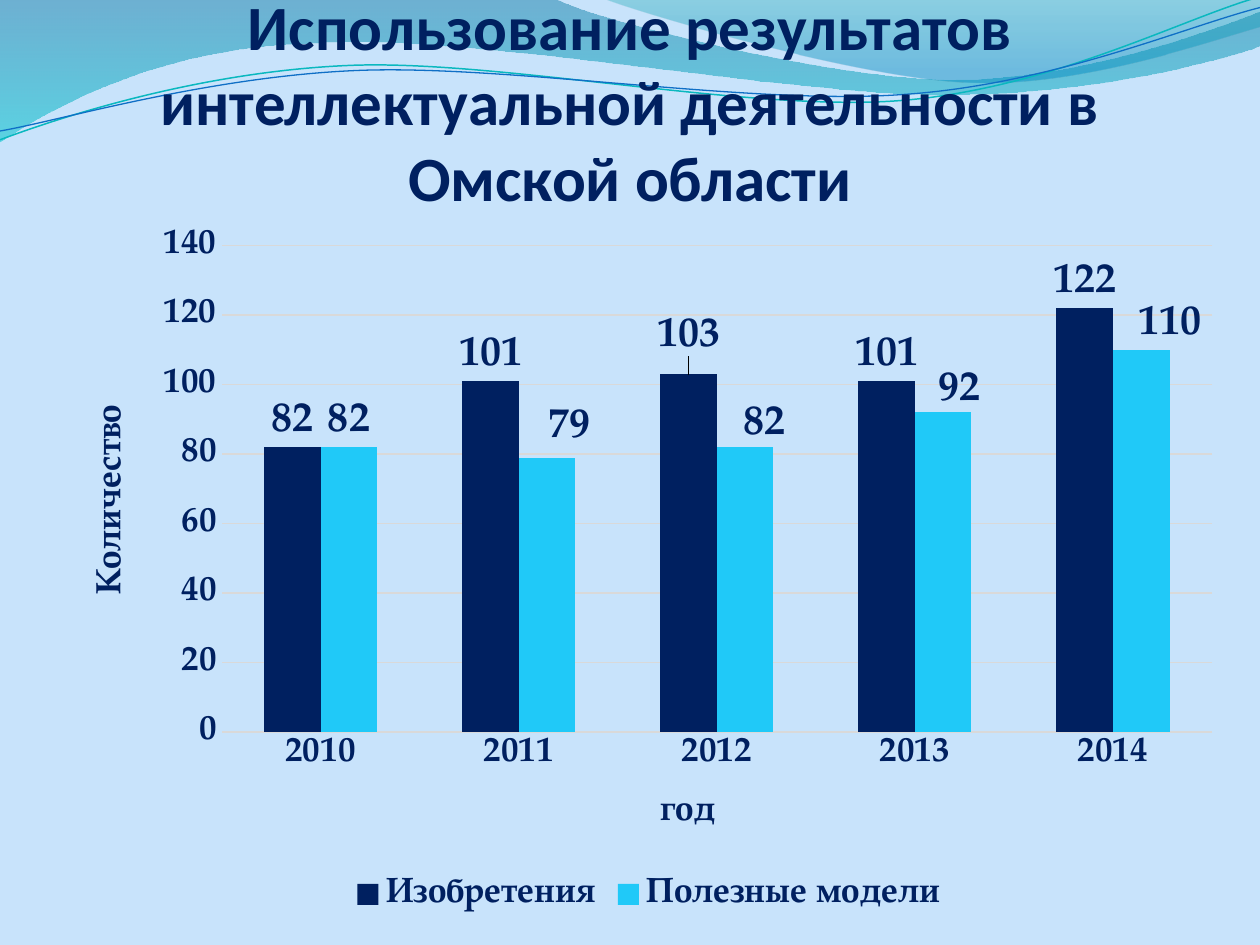
from lxml import etree
from pptx import Presentation
from pptx.chart.data import CategoryChartData
from pptx.dml.color import RGBColor
from pptx.enum.chart import XL_CHART_TYPE as ChartType, XL_LABEL_POSITION as LabelPos
from pptx.enum.chart import XL_LEGEND_POSITION as LegendPos, XL_TICK_MARK as Tick
from pptx.enum.text import MSO_ANCHOR as Anchor, PP_ALIGN as Align
from pptx.oxml import parse_xml
from pptx.oxml.ns import nsdecls, qn
from pptx.util import Inches, Pt

COLORS = {
    "bg": "C8E3FB", "navy": "002060", "cyan": "20C9F8", "grid": "D9D9D9",
    "wave_blue": "0074A1", "wave_cyan": "00C6CF",
    "crest_teal": "00A1A9", "crest_blue": "008BBF",
    "line_teal": "0AB8BF", "line_blue": "0F6FC6",
}
SERIF = "TeX Gyre Pagella"
YEARS = ["2010", "2011", "2012", "2013", "2014"]
SERIES = [
    ("Изобретения", [82, 101, 103, 101, 122], "navy", {2: (0, -0.1)}),
    ("Полезные модели", [82, 79, 82, 92, 110], "cyan",
     {1: (0.18, -0.04), 2: (0.15, 0.02), 3: (0.13, 0.03), 4: (0.23, 0)}),
]
WAVES = [
    ([(0, 0), (4.4, -0.01),
      (4.76, 0.17, 6.64, 0.63, 7.58, 0.63), (8.53, 0.63, 9.58, 0.26, 10, 0.09),
      (10.01, 0.36),
      (9.83, 0.44, 8.7, 0.76, 7.46, 0.75), (6.22, 0.75, 3.82, 0.28, 2.57, 0.34),
      (1.29, 0.36, 0.46, 0.83, -0.01, 1.13), (0, 0)],
     [("wave_blue", 0, 45), ("wave_cyan", 1, 55)]),
    ([(4.79, -0.01),
      (5.09, 0.11, 6.82, 0.62, 7.69, 0.65), (8.56, 0.69, 9.61, 0.32, 10, 0.21),
      (10, 0), (4.79, -0.01)],
     [("crest_teal", 0, 30), ("crest_blue", 0.8, 45)]),
]
STRANDS = [
    ([(0, 1.11), (0.48, 0.93, 1.58, 0.57, 2.77, 0.52),
      (3.95, 0.47, 5.93, 0.89, 7.13, 0.8), (8.33, 0.71, 9.38, 0.15, 9.98, -0.02)],
     "line_teal", 0.85),
    ([(0, 1.04), (0.47, 0.96, 1.64, 0.61, 2.83, 0.56),
      (4.03, 0.51, 5.97, 0.84, 7.17, 0.75), (8.36, 0.67, 9.41, 0.21, 10, 0.06)],
     "line_blue", 0.75),
]


def rgb(name):
    """Return the named colour."""
    return RGBColor.from_string(COLORS[name])


def style_font(font, size, name=SERIF):
    """Make a font bold navy in the given size."""
    font.name, font.size, font.bold = name, Pt(size), True
    font.color.rgb = rgb("navy")


def add_outline(s, left, top, steps, close):
    """Draw an outline of lines and cubic curves, offset from left and top."""
    points = [(Inches(x), Inches(y)) for step in steps
              for x, y in zip(step[::2], step[1::2])]
    builder = s.shapes.build_freeform(*points[0], scale=1.0)
    builder.add_line_segments(points[1:], close=close)
    sp = builder.convert_to_shape(left, top)
    sp.shadow.inherit = False
    segments = iter(list(sp._element.iter(qn("a:lnTo"))))
    for step in steps[1:]:
        segment = next(segments)
        if len(step) == 6:
            curve = etree.Element(qn("a:cubicBezTo"))
            segment.addprevious(curve)
            for part in (segment, next(segments), next(segments)):
                curve.append(part[0])
                part.getparent().remove(part)
    return sp


def add_waves(s, left, top):
    """Draw the translucent waves and thin strands of the header."""
    for steps, stops in WAVES:
        sp = add_outline(s, left, top, steps, True)
        sp.line.fill.background()
        sp.fill.gradient()
        sp.fill.gradient_angle = 270
        for stop, (color, position, _) in zip(sp.fill.gradient_stops, stops):
            stop.color.rgb, stop.position = rgb(color), position
        for clr, (_, _, alpha) in zip(sp._element.spPr.iter(qn("a:srgbClr")), stops):
            etree.SubElement(clr, qn("a:alpha")).set("val", str(alpha * 1000))
    for steps, color, width in STRANDS:
        sp = add_outline(s, left, top, steps, False)
        sp.fill.background()
        sp.line.color.rgb, sp.line.width = rgb(color), Pt(width)


def add_title(s, left, top, width, height):
    """Place the bottom-anchored title."""
    tf = s.shapes.add_textbox(left, top, width, height).text_frame
    tf.word_wrap, tf.vertical_anchor = True, Anchor.BOTTOM
    tf.margin_left = tf.margin_right = tf.margin_bottom = 0
    tf.margin_top = Inches(0.05)
    p = tf.paragraphs[0]
    p.text = "Использование результатов интеллектуальной деятельности в Омской области"
    p.alignment = Align.CENTER
    style_font(p.font, 36, "Calibri")


def manual_layout(target="", **values):
    """Return a manual chart layout element."""
    items = "".join(f'<c:{key} val="{value}"/>' for key, value in values.items())
    return parse_xml(f'<c:layout {nsdecls("c")}><c:manualLayout>{target}{items}'
                     "</c:manualLayout></c:layout>")


def style_axis(axis, title):
    """Give an axis its title and hide its line and ticks."""
    axis.major_tick_mark = axis.minor_tick_mark = Tick.NONE
    axis.format.line.fill.background()
    style_font(axis.tick_labels.font, 20)
    p = axis.axis_title.text_frame.paragraphs[0]
    p.text = title
    style_font(p.font, 20)


def style_series(series, color, shifts, width, height):
    """Colour a series, label it and shift single labels."""
    series.format.fill.solid()
    series.format.fill.fore_color.rgb = rgb(color)
    labels = series.data_labels
    labels.show_value, labels.position = True, LabelPos.OUTSIDE_END
    style_font(labels.font, 24)
    for i in shifts:
        label = series.points[i].data_label
        style_font(label.font, 24)
        label.position = LabelPos.OUTSIDE_END
    for dlbl, (dx, dy) in zip(labels._element.findall(qn("c:dLbl")), shifts.values()):
        dlbl.insert(1, manual_layout(x=Inches(dx) / width, y=Inches(dy) / height))


def add_column_chart(s, left, top, width, height):
    """Place the clustered column chart."""
    data = CategoryChartData()
    data.categories = YEARS
    for name, values, _, _ in SERIES:
        data.add_series(name, values)
    chart = s.shapes.add_chart(ChartType.COLUMN_CLUSTERED, left, top, width, height, data).chart
    style_font(chart.font, 20)
    chart.has_title = False
    chart.has_legend = True
    chart.legend.position, chart.legend.include_in_layout = LegendPos.BOTTOM, False
    style_font(chart.legend.font, 20)
    style_axis(chart.category_axis, "год")
    axis = chart.value_axis
    style_axis(axis, "Количество")
    axis.minimum_scale, axis.maximum_scale, axis.major_unit = 0, 140, 20
    grid = axis.major_gridlines.format.line
    grid.color.rgb, grid.width = rgb("grid"), Pt(0.75)
    plot = chart.plots[0]
    plot.gap_width, plot.overlap, plot.vary_by_categories = 150, 0, False
    for series, (_, _, color, shifts) in zip(plot.series, SERIES):
        style_series(series, color, shifts, width, height)
    area = chart._chartSpace.chart.plotArea
    for old in area.findall(qn("c:layout")):
        area.remove(old)
    area.insert(0, manual_layout('<c:layoutTarget val="inner"/>', xMode="edge", yMode="edge",
                                 x=Inches(1.26) / width, y=Inches(0.25) / height,
                                 w=Inches(7.86) / width, h=Inches(3.86) / height))


def main():
    """Build and save the slide."""
    prs = Presentation()
    prs.slide_width, prs.slide_height = Inches(10), Inches(7.5)
    s = prs.slides.add_slide(prs.slide_layouts[6])
    s.background.fill.solid()
    s.background.fill.fore_color.rgb = rgb("bg")
    add_waves(s, Inches(0), Inches(0))
    add_title(s, Inches(0.5), Inches(0), Inches(9), Inches(1.7))
    add_column_chart(s, Inches(0.5), Inches(1.7), Inches(9.3), Inches(5.59))
    prs.save("out.pptx")


if __name__ == "__main__":
    main()
